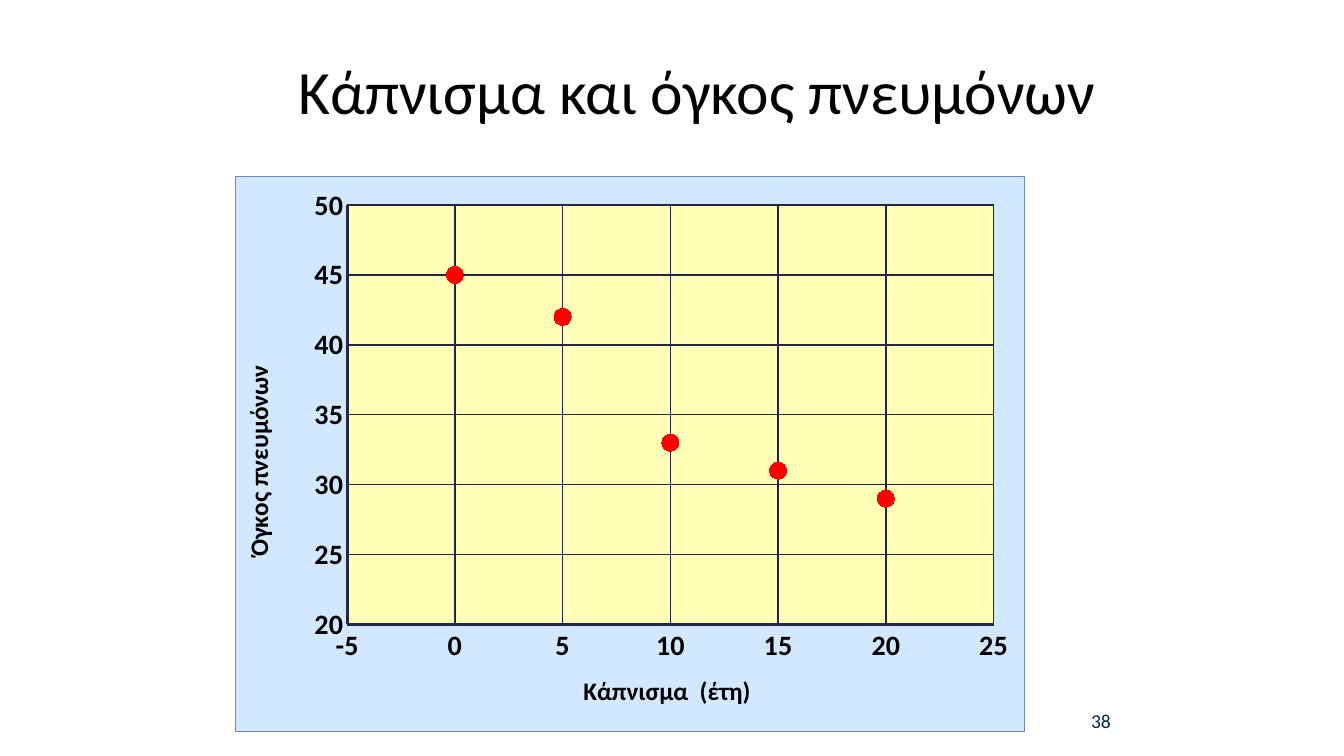
from lxml.etree import SubElement
from pptx import Presentation
from pptx.chart.data import XyChartData
from pptx.dml.color import RGBColor
from pptx.enum.chart import (XL_AXIS_CROSSES, XL_CHART_TYPE, XL_MARKER_STYLE,
                             XL_TICK_LABEL_POSITION, XL_TICK_MARK)
from pptx.enum.text import MSO_ANCHOR, PP_ALIGN
from pptx.oxml import parse_xml
from pptx.oxml.ns import nsdecls, qn
from pptx.util import Inches, Pt

FONT = "Calibri"
CHART_WIDTH, CHART_HEIGHT = 7.84, 5.51
COLORS = {
    "text": "000000",
    "number": "00264C",
    "chart": "D2E8FF",
    "border": "7583BC",
    "plot": "FFFFB8",
    "grid": "212844",
    "marker": "FF0000",
}


def set_layout(element, **values):
    layout = element.find(qn("c:layout"))
    if layout is None:
        layout = parse_xml(f"<c:layout {nsdecls('c')}/>")
        element.insert(0, layout)
    manual = SubElement(layout, qn("c:manualLayout"))
    for name, value in values.items():
        SubElement(manual, qn(f"c:{name}")).set("val", str(value))


def area_properties(fill, line):
    return parse_xml(
        f"<c:spPr {nsdecls('c', 'a')}>"
        f'<a:solidFill><a:srgbClr val="{fill}"/></a:solidFill>{line}</c:spPr>')


presentation = Presentation()
presentation.slide_width = Inches(13.33)
presentation.slide_height = Inches(7.5)
slide = presentation.slides.add_slide(presentation.slide_layouts[5])

number_box = slide.shapes.add_textbox(Inches(9.42), Inches(6.95), Inches(3), Inches(0.4))
title = slide.shapes.title
title.left, title.top = Inches(2.86), Inches(0.31)
title.width, title.height = Inches(8.5), Inches(1.25)

for shape, text, size, color, alignment in (
    (number_box, "38", 14, "number", PP_ALIGN.CENTER),
    (title, "Κάπνισμα και όγκος πνευμόνων", 44, "text", PP_ALIGN.LEFT),
):
    frame = shape.text_frame
    frame.word_wrap = True
    frame.vertical_anchor = MSO_ANCHOR.MIDDLE
    paragraph = frame.paragraphs[0]
    paragraph.alignment = alignment
    run = paragraph.add_run()
    run.text = text
    run.font.size = Pt(size)
    run.font.name = FONT
    run.font.color.rgb = RGBColor.from_string(COLORS[color])
title.text_frame.paragraphs[0].line_spacing = 0.9

chart_data = XyChartData()
points = chart_data.add_series("Series 1")
for years, volume in ((None, None), (0, 45), (5, 42), (10, 33), (15, 31), (20, 29)):
    points.add_data_point(years, volume)
chart = slide.shapes.add_chart(
    XL_CHART_TYPE.XY_SCATTER, Inches(2.33), Inches(1.75),
    Inches(CHART_WIDTH), Inches(CHART_HEIGHT), chart_data).chart
chart.has_legend = False
chart.has_title = False
chart.font.name = FONT
chart.font.size = Pt(10)
chart.font.color.rgb = RGBColor.from_string(COLORS["text"])
chart.plots[0].vary_by_categories = False

series = chart.plots[0].series[0]
series.format.line.fill.background()
series.marker.style = XL_MARKER_STYLE.CIRCLE
series.marker.size = 12
series.marker.format.fill.solid()
series.marker.format.fill.fore_color.rgb = RGBColor.from_string(COLORS["marker"])
series.marker.format.line.color.rgb = RGBColor.from_string(COLORS["marker"])
for point in list(series._element.iter(qn("c:pt"))):
    if point.find(qn("c:v")).text in (None, "", "None"):
        point.getparent().remove(point)

for axis, text, low, high, left, top in (
    (chart.category_axis, "Κάπνισμα  (έτη)", -5, 25, 3.41, 4.89),
    (chart.value_axis, "Όγκος πνευμόνων", 20, 50, 0.01, 1.83),
):
    axis.minimum_scale = low
    axis.maximum_scale = high
    axis.major_unit = 5
    axis.crosses = XL_AXIS_CROSSES.MINIMUM
    axis.major_tick_mark = XL_TICK_MARK.NONE
    axis.minor_tick_mark = XL_TICK_MARK.NONE
    axis.tick_label_position = XL_TICK_LABEL_POSITION.NEXT_TO_AXIS
    axis.has_major_gridlines = True
    for line, width in ((axis.format.line, 2.25), (axis.major_gridlines.format.line, 1)):
        line.width = Pt(width)
        line.color.rgb = RGBColor.from_string(COLORS["grid"])
    run = axis.axis_title.text_frame.paragraphs[0].add_run()
    run.text = text
    for font, size in ((axis.tick_labels.font, 20), (run.font, 18)):
        font.name = FONT
        font.size = Pt(size)
        font.bold = True
        font.color.rgb = RGBColor.from_string(COLORS["text"])
    set_layout(axis.axis_title._element, xMode="edge", yMode="edge",
               x=left / CHART_WIDTH, y=top / CHART_HEIGHT)

body = chart.value_axis.axis_title._element.find(".//" + qn("a:bodyPr"))
body.set("rot", "-5400000")
body.set("vert", "horz")

chart_space = chart._chartSpace
plot_area = chart_space.find(".//" + qn("c:plotArea"))
set_layout(plot_area, layoutTarget="inner", xMode="edge", yMode="edge",
           x=1.11 / CHART_WIDTH, y=0.28 / CHART_HEIGHT,
           w=6.42 / CHART_WIDTH, h=4.17 / CHART_HEIGHT)
plot_area.append(area_properties(COLORS["plot"], "<a:ln><a:noFill/></a:ln>"))
border = (f'<a:ln w="{Pt(0.75)}"><a:solidFill><a:srgbClr val="{COLORS["border"]}"/>'
          "</a:solidFill></a:ln>")
chart_space.find(qn("c:txPr")).addprevious(area_properties(COLORS["chart"], border))

presentation.save("out.pptx")
